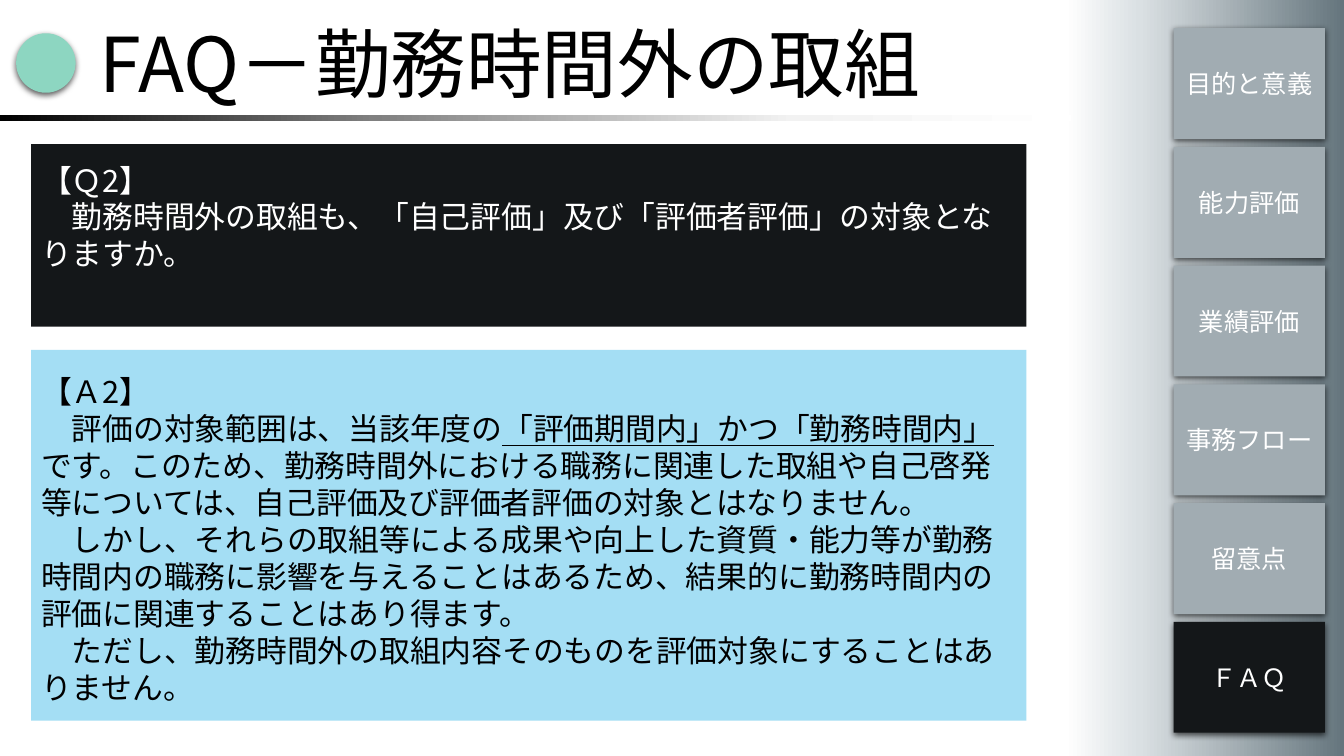
from dataclasses import dataclass

from lxml import etree
from pptx import Presentation
from pptx.dml.color import RGBColor
from pptx.enum.lang import MSO_LANGUAGE_ID
from pptx.enum.shapes import MSO_SHAPE
from pptx.enum.text import MSO_ANCHOR, PP_ALIGN
from pptx.oxml.ns import qn
from pptx.util import Inches, Pt

RECT, OVAL = MSO_SHAPE.RECTANGLE, MSO_SHAPE.OVAL
TOP, MIDDLE = MSO_ANCHOR.TOP, MSO_ANCHOR.MIDDLE
LEFT, CENTER = PP_ALIGN.LEFT, PP_ALIGN.CENTER
JAPANESE = MSO_LANGUAGE_ID.JAPANESE

# Content: each paragraph is a list of (text, underlined) runs
TITLE = [[("FAQ－勤務時間外の取組", False)]]
QUESTION = [
    [("【Ｑ2】", False)],
    [("　勤務時間外の取組も、「自己評価」及び「評価者評価」の対象となりますか。", False)],
]
ANSWER = [
    [("【Ａ2】", False)],
    [("　評価の対象範囲は、当該年度の", False),
     ("「評価期間内」かつ「勤務時間内」", True),
     ("です。このため、勤務時間外における職務に関連した取組や自己啓発等については、"
      "自己評価及び評価者評価の対象とはなりません。", False)],
    [("　しかし、それらの取組等による成果や向上した資質・能力等が勤務時間内の職務に"
      "影響を与えることはあるため、結果的に勤務時間内の評価に関連することはあり得ます。", False)],
    [("　ただし、勤務時間外の取組内容そのものを評価対象にすることはありません。", False)],
]
TABS = ["目的と意義", "能力評価", "業績評価", "事務フロー", "留意点", "ＦＡＱ"]
ACTIVE_TAB = "ＦＡＱ"


@dataclass(frozen=True)
class Theme:
    dark: str = "141719"
    sky: str = "A4DEF4"
    grey: str = "A1ACB2"
    mint: str = "8DD6C1"
    black: str = "000000"
    white: str = "FFFFFF"
    side_fade: tuple = ((0, "FFFFFF"), (27, "DAE0E3"), (100, "65757D"))
    rule_fade: tuple = ((0, "000000"), (35, "808080"), (74, "F2F2F2"), (100, "FFFFFF"))
    body_font: str = "Noto Sans CJK JP"
    tab_font: str = "Noto Sans CJK SC"
    title_size: int = 54
    body_size: int = 22
    tab_size: int = 18


T = Theme()

# Layout in inches
SLIDE_W, SLIDE_H = 13.33, 7.5
PANEL_X, PANEL_W = 0.31, 9.87
SIDE_X = 10.56
TAB_X, TAB_W, TAB_H = 11.64, 1.5, 1.1
TAB_FIRST, TAB_LAST = 0.28, 6.17
TAB_STEP = (TAB_LAST - TAB_FIRST) / (len(TABS) - 1)


def add_shadow(sp):
    effects = sp._element.spPr.find(qn("a:effectLst"))
    shadow = etree.SubElement(effects, qn("a:outerShdw"), blurRad=str(Pt(4.5)),
                              dist=str(Pt(1.5)), dir="5400000", rotWithShape="0")
    color = etree.SubElement(shadow, qn("a:srgbClr"), val=T.black)
    etree.SubElement(color, qn("a:alpha"), val="63000")


def set_gradient(sp, stops):
    sp.fill.gradient()
    sp.fill.gradient_angle = 0
    stop_list = sp._element.spPr.find(qn("a:gradFill")).find(qn("a:gsLst"))
    for old in list(stop_list):
        stop_list.remove(old)
    for share, color in stops:
        stop = etree.SubElement(stop_list, qn("a:gs"), pos=str(share * 1000))
        etree.SubElement(stop, qn("a:srgbClr"), val=color)


def add_block(slide, kind, box, fill, shadow=False):
    sp = slide.shapes.add_shape(kind, *map(Inches, box))
    sp.shadow.inherit = False
    sp.line.fill.background()
    if isinstance(fill, tuple):
        set_gradient(sp, fill)
    else:
        sp.fill.solid()
        sp.fill.fore_color.rgb = RGBColor.from_string(fill)
    if shadow:
        add_shadow(sp)
    return sp


def write(sp, paragraphs, *, size=T.body_size, font=T.body_font, color=T.black,
          align=LEFT, anchor=MIDDLE, top=0.05, bottom=0.05):
    tf = sp.text_frame
    tf.word_wrap = True
    tf.vertical_anchor = anchor
    tf.margin_top, tf.margin_bottom = Inches(top), Inches(bottom)
    for i, runs in enumerate(paragraphs):
        p = tf.add_paragraph() if i else tf.paragraphs[0]
        p.alignment = align
        for text, underlined in runs:
            r = p.add_run()
            r.text = text
            r.font.size = Pt(size)
            r.font.color.rgb = RGBColor.from_string(color)
            r.font.underline = underlined
            r.font.language_id = JAPANESE
            r.font.name = font
            latin = r._r.rPr.find(qn("a:latin"))
            latin.addnext(latin.makeelement(qn("a:ea"), {"typeface": font}))


def main():
    prs = Presentation()
    prs.slide_width, prs.slide_height = Inches(SLIDE_W), Inches(SLIDE_H)
    slide = prs.slides.add_slide(prs.slide_layouts[6])

    # Question and answer panels
    sp = add_block(slide, RECT, (PANEL_X, 1.43, PANEL_W, 1.81), T.dark)
    write(sp, QUESTION, color=T.white, bottom=0.42)
    sp = add_block(slide, RECT, (PANEL_X, 3.47, PANEL_W, 3.68), T.sky)
    write(sp, ANSWER, anchor=TOP, top=0.23)

    # Side band with navigation tabs
    add_block(slide, RECT, (SIDE_X, 0, SLIDE_W - SIDE_X, SLIDE_H), T.side_fade)
    for i, label in enumerate(TABS):
        fill = T.dark if label == ACTIVE_TAB else T.grey
        sp = add_block(slide, RECT, (TAB_X, TAB_FIRST + i * TAB_STEP, TAB_W, TAB_H),
                       fill, shadow=True)
        write(sp, [[(label, False)]], size=T.tab_size, font=T.tab_font,
              color=T.white, align=CENTER)

    # Title with its dot and rule
    add_block(slide, OVAL, (0.16, 0.33, 0.59, 0.59), T.mint, shadow=True)
    title = slide.shapes.add_textbox(*map(Inches, (0.89, 0.28, 12.24, 0.67)))
    write(title, TITLE, size=T.title_size)
    add_block(slide, RECT, (0, 1.14, 10.63, 0.06), T.rule_fade)

    prs.save("out.pptx")


if __name__ == "__main__":
    main()
